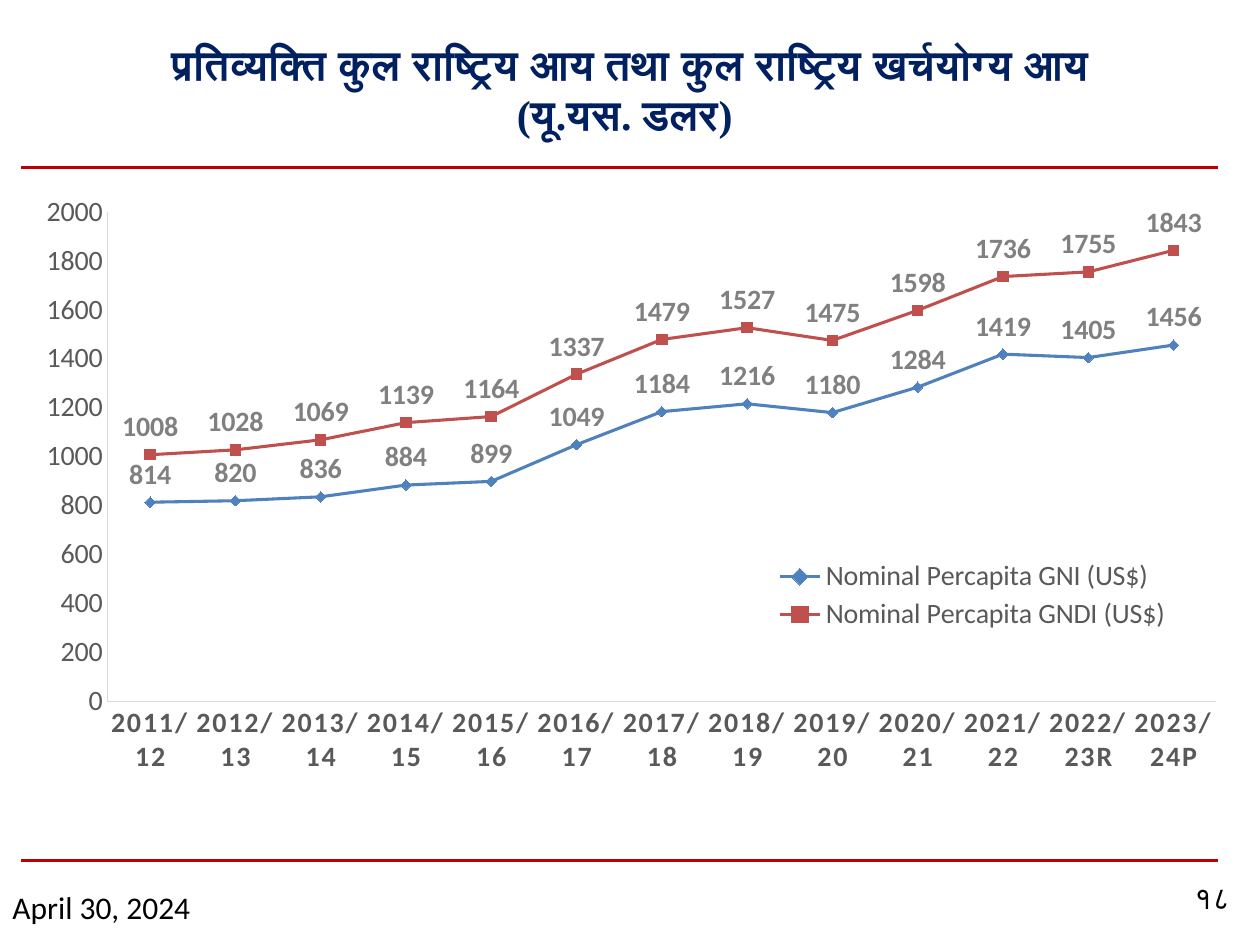
"""Build a slide that charts per capita GNI and GNDI by fiscal year."""
from lxml.etree import SubElement
from pptx import Presentation
from pptx.chart.data import CategoryChartData as Data
from pptx.dml.color import RGBColor
from pptx.enum.chart import XL_CHART_TYPE as Kind, XL_LABEL_POSITION as Spot
from pptx.enum.chart import XL_LEGEND_POSITION as Side, XL_MARKER_STYLE as Mark
from pptx.enum.chart import XL_TICK_MARK as Tick
from pptx.enum.shapes import MSO_CONNECTOR as Link
from pptx.enum.text import MSO_ANCHOR as Anchor, PP_ALIGN as Align
from pptx.oxml import parse_xml
from pptx.oxml.ns import qn
from pptx.util import Inches, Pt


def style(font, size, color, bold=False, name="Calibri"):
    font.size, font.bold, font.name = Pt(size), bold, name
    font.color.rgb = RGBColor.from_string(color)


def place(part, index, box, inner=""):
    for old in part.findall(qn("c:layout")):
        part.remove(old)
    modes = "".join(f'<c:{m} val="edge"/>' for m in ("xMode", "yMode"))
    sizes = "".join(f'<c:{k} val="{v}"/>' for k, v in zip("xywh", box))
    space = "http://schemas.openxmlformats.org/drawingml/2006/chart"
    part.insert(index, parse_xml(
        f'<c:layout xmlns:c="{space}"><c:manualLayout>{inner}{modes}{sizes}'
        '</c:manualLayout></c:layout>'))


deck = Presentation()
deck.slide_width, deck.slide_height = Inches(10), Inches(7.5)
wide, high = deck.slide_width, deck.slide_height
slide = deck.slides.add_slide(deck.slide_layouts[5])
shapes = slide.shapes

for y in (1.33, 6.83):
    rule = shapes.add_connector(
        Link.STRAIGHT, Inches(0.17), Inches(y), Inches(9.67), Inches(y))
    rule.line.color.rgb = RGBColor.from_string("C00000")
    rule.line.width = Pt(1.5)
    SubElement(rule._element.spPr, qn("a:effectLst"))

title = shapes.title
title.left, title.top = int(wide * 0.05), Inches(0.19)
title.width, title.height = int(wide * 0.9), Inches(1.03)
frame = title.text_frame
frame.text = "प्रतिव्यक्ति कुल राष्ट्रिय आय तथा कुल राष्ट्रिय खर्चयोग्य आय\v(यू.यस. डलर) "
frame.vertical_anchor = Anchor.MIDDLE
frame.paragraphs[0].alignment = Align.CENTER
for run in frame.paragraphs[0].runs:
    style(run.font, 24, "002060", True, "Times New Roman")

for text, box, align, name in (
        ("April 30, 2024", (0, 7, 2.17, 0.41), Align.LEFT, "Calibri"),
        ("१८", (9.33, 6.92, 0.58, 0.48), Align.CENTER, "Roboto")):
    frame = shapes.add_textbox(*map(Inches, box)).text_frame
    frame.word_wrap = True
    frame.text = text
    frame.paragraphs[0].alignment = align
    style(frame.paragraphs[0].runs[0].font, 18, "000000", name=name)

data = Data(number_format="0")
data.categories = [f"{y}/{y % 100 + 1}" + {2022: "R", 2023: "P"}.get(y, "")
                   for y in range(2011, 2024)]
data.add_series("Nominal Percapita GNI (US$)", (
    814, 820, 836, 884, 899, 1049, 1184, 1216, 1180, 1284, 1419, 1405, 1456))
data.add_series("Nominal Percapita GNDI (US$)", (
    1008, 1028, 1069, 1139, 1164, 1337, 1479, 1527, 1475, 1598, 1736, 1755, 1843))
chart = shapes.add_chart(
    Kind.LINE_MARKERS, *map(Inches, (0.08, 1.42, 9.67, 5.25)), data).chart
style(chart.font, 16, "000000")
chart.has_title = False
plot = chart.plots[0]
plot.vary_by_categories = False

looks = (("4F81BD", Mark.DIAMOND), ("C0504D", Mark.SQUARE))
for line, (color, mark) in zip(plot.series, looks):
    shade = RGBColor.from_string(color)
    line.smooth = False
    line.format.line.color.rgb = shade
    line.format.line.width = Pt(1.75)
    line.marker.style, line.marker.size = mark, 6
    line.marker.format.fill.solid()
    line.marker.format.fill.fore_color.rgb = shade
    line.marker.format.line.color.rgb = shade
    tags = line.data_labels
    tags.show_value, tags.position = True, Spot.ABOVE
    tags.number_format, tags.number_format_is_linked = "0", False
    style(tags.font, 16, "808080", True)

years, scale = chart.category_axis, chart.value_axis
for axis in (years, scale):
    axis.major_tick_mark = axis.minor_tick_mark = Tick.NONE
    axis.has_major_gridlines = False
    axis.format.line.color.rgb = RGBColor.from_string("D9D9D9")
    axis.format.line.width = Pt(0.75)
    style(axis.tick_labels.font, 16, "595959", axis is years)
years._element.find(".//" + qn("a:defRPr")).set("spc", "120")
scale.minimum_scale, scale.maximum_scale, scale.major_unit = 0, 2000, 200
scale.tick_labels.number_format = "0"
scale.tick_labels.number_format_is_linked = False

chart.has_legend = True
legend = chart.legend
legend.position, legend.include_in_layout = Side.TOP, False
style(legend.font, 16, "595959")
place(legend._element, 1, (0.62, 0.57, 0.34, 0.12))
place(plot._element.getparent(), 0, (0.08, 0.05, 0.91, 0.74),
      '<c:layoutTarget val="inner"/>')

deck.save("out.pptx")
